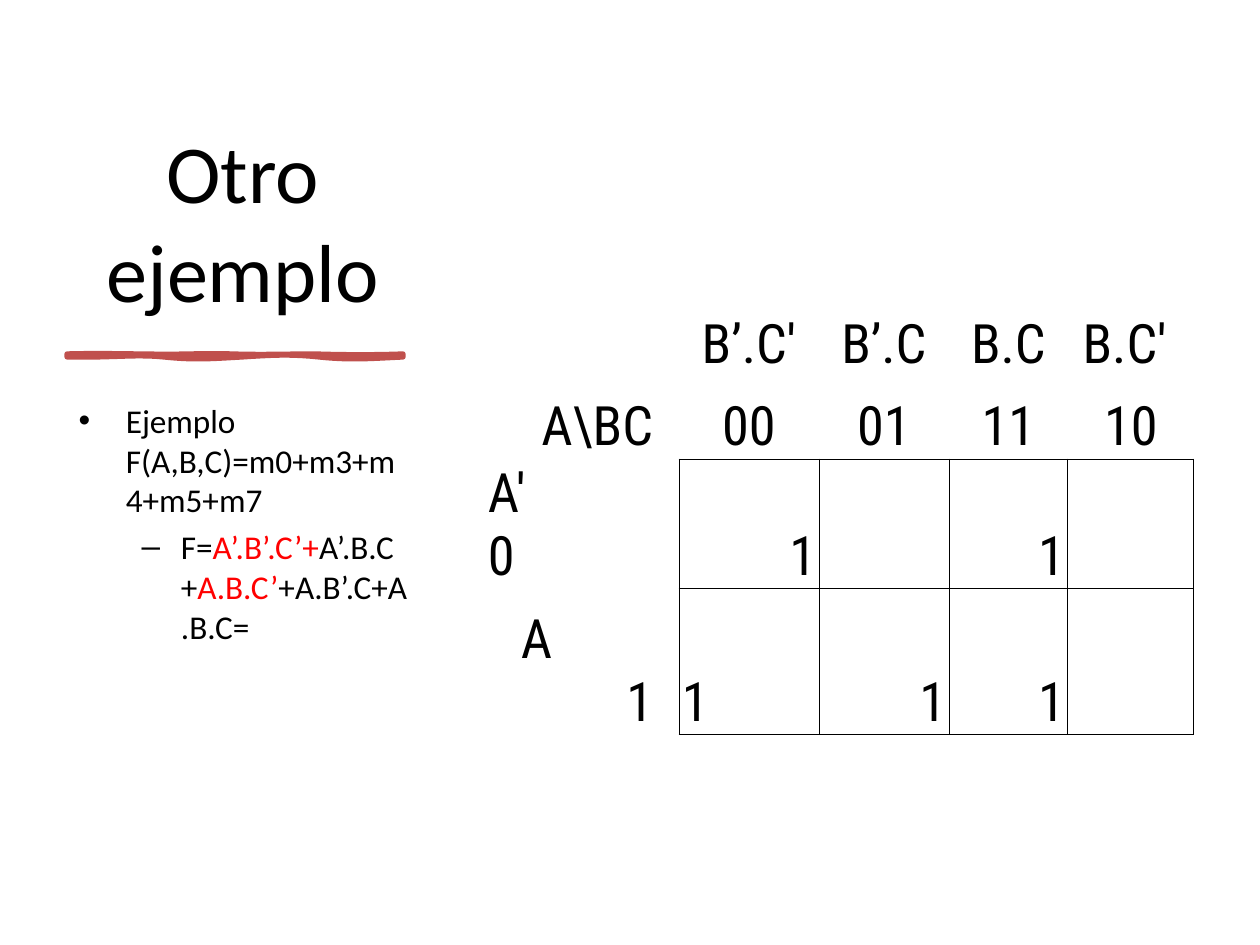
from dataclasses import dataclass

from lxml.etree import SubElement
from pptx import Presentation
from pptx.dml.color import RGBColor
from pptx.enum.text import MSO_ANCHOR, MSO_AUTO_SIZE, PP_ALIGN
from pptx.oxml.ns import qn
from pptx.util import Emu, Pt

EMU_PER_PX = 914400 / 126


def px(length):
    return Emu(round(length * EMU_PER_PX))


@dataclass(frozen=True)
class Theme:
    text: str = "000000"
    marked: str = "FF0000"
    accent: str = "C0504D"
    text_font: str = "Calibri"
    table_font: str = "Roboto Condensed"
    title_size: int = 47
    body_size: int = 19
    table_size: int = 31
    grid_width: float = 0.5
    stroke_width: int = 3


def bezier(start, first, second, end, steps=10):
    """Points on a cubic curve, without its start."""
    for step in range(1, steps + 1):
        t = step / steps
        weights = ((1 - t) ** 3, 3 * t * (1 - t) ** 2, 3 * t * t * (1 - t), t ** 3)
        yield tuple(
            sum(weight * value for weight, value in zip(weights, axis))
            for axis in zip(start, first, second, end)
        )


class SlideBuilder:
    def __init__(self, slide, theme):
        self.slide = slide
        self.theme = theme

    def add_span(self, para, text, size, font, color=None):
        span = para.add_run()
        span.text = text
        span.font.size = Pt(size)
        span.font.name = font
        span.font.color.rgb = RGBColor.from_string(color or self.theme.text)

    def place(self, box, left, top, width, height):
        box.left, box.top, box.width, box.height = map(px, (left, top, width, height))
        frame = box.text_frame
        frame.word_wrap = True
        frame.auto_size = MSO_AUTO_SIZE.NONE
        return frame

    def title(self, text, *area):
        frame = self.place(self.slide.shapes.title, *area)
        frame.vertical_anchor = MSO_ANCHOR.BOTTOM
        para = frame.paragraphs[0]
        para.alignment = PP_ALIGN.CENTER
        self.add_span(para, text, self.theme.title_size, self.theme.text_font)

    def bullets(self, items, *area):
        frame = self.place(self.slide.placeholders[1], *area)
        frame.margin_top = px(13)
        for index, (level, spans) in enumerate(items):
            para = frame.add_paragraph() if index else frame.paragraphs[0]
            para.level = level
            if index == 0:
                para.space_before = Pt(0)
            for text, color in spans:
                self.add_span(para, text, self.theme.body_size, self.theme.text_font, color)

    def brush_stroke(self, start, curves):
        points = []
        current = start
        for curve in curves:
            points.extend(bezier(current, *curve))
            current = curve[-1]
        builder = self.slide.shapes.build_freeform(px(start[0]), px(start[1]))
        builder.add_line_segments([(px(x), px(y)) for x, y in points], close=True)
        stroke = builder.convert_to_shape()
        stroke.shadow.inherit = False
        stroke.fill.solid()
        stroke.fill.fore_color.rgb = RGBColor.from_string(self.theme.accent)
        stroke.line.color.rgb = RGBColor.from_string(self.theme.accent)
        stroke.line.width = Pt(self.theme.stroke_width)

    def table(self, rows, left, top, widths, heights):
        table = self.slide.shapes.add_table(
            len(heights), len(widths), px(left), px(top), px(sum(widths)), px(sum(heights))
        ).table
        table.first_row = table.horz_banding = False
        for column, width in zip(table.columns, widths):
            column.width = px(width)
        for row, height in zip(table.rows, heights):
            row.height = px(height)
        for r, contents in enumerate(rows):
            for c, paras in enumerate(contents):
                cell = table.cell(r, c)
                in_grid = r >= 2 and c >= 1
                self.borders(cell, {
                    "L": in_grid,
                    "R": in_grid or r >= 2,
                    "T": in_grid,
                    "B": in_grid or (r == 1 and c >= 1),
                })
                cell.fill.background()
                self.cell_text(cell, paras, right_margin=3 if c else 26)

    def borders(self, cell, sides):
        properties = cell._tc.get_or_add_tcPr()
        for side, visible in sides.items():
            line = SubElement(properties, qn(f"a:ln{side}"), w=str(Pt(self.theme.grid_width)))
            if visible:
                fill = SubElement(line, qn("a:solidFill"))
                SubElement(fill, qn("a:srgbClr"), val=self.theme.text)
            else:
                SubElement(line, qn("a:noFill"))

    def cell_text(self, cell, paras, right_margin):
        cell.vertical_anchor = MSO_ANCHOR.BOTTOM
        cell.margin_left = cell.margin_top = px(3)
        cell.margin_right = px(right_margin)
        cell.margin_bottom = 0
        for index, (text, alignment, indent, tab) in enumerate(paras):
            frame = cell.text_frame
            para = frame.add_paragraph() if index else frame.paragraphs[0]
            properties = para._p.get_or_add_pPr()
            if indent:
                properties.set("marL", str(px(indent)))
            if tab:
                stops = SubElement(properties, qn("a:tabLst"))
                SubElement(stops, qn("a:tab"), pos=str(px(tab)), algn="l")
            para.alignment = alignment
            self.add_span(para, text, self.theme.table_size, self.theme.table_font)


def entry(text, alignment=PP_ALIGN.RIGHT, indent=0, tab=0):
    return (text, alignment, indent, tab)


def header(*texts):
    return [[entry(text, PP_ALIGN.CENTER)] for text in texts]


def main():
    deck = Presentation()
    deck.slide_width, deck.slide_height = px(1260), px(945)
    theme = Theme()
    page = SlideBuilder(deck.slides.add_slide(deck.slide_layouts[1]), theme)

    # Title and the brush stroke under it
    page.title("Otro ejemplo", 66, 88, 354, 237)
    page.brush_stroke((67, 354), [
        ((105, 353), (116, 354), (147, 354)),
        ((179, 355), (203, 353), (232, 354)),
        ((260, 355), (286, 354), (315, 354)),
        ((345, 355), (377, 355), (403, 354)),
        ((403, 355), (403, 357), (403, 357)),
        ((365, 359), (348, 360), (319, 357)),
        ((290, 354), (273, 355), (242, 357)),
        ((209, 359), (192, 360), (164, 357)),
        ((136, 354), (112, 358), (67, 357)),
    ])

    # Function and its minterms
    page.bullets([
        (0, [("Ejemplo F(A,B,C)=m0+m3+m4+m5+m7", None)]),
        (1, [
            ("F=", None),
            ("A’.B’.C’+", theme.marked),
            ("A’.B.C+", None),
            ("A.B.C’", theme.marked),
            ("+A.B’.C+A.B.C=", None),
        ]),
    ], 66, 387, 354, 470)

    # Karnaugh map
    one = [entry("1")]
    left_one = [entry("1", PP_ALIGN.LEFT)]
    row_zero = [entry("A'\t0", PP_ALIGN.LEFT, indent=4, tab=141)]
    row_one = [entry("A", PP_ALIGN.LEFT, indent=37), entry("1")]
    page.table([
        [[], *header("B’.C'", "B’.C", "B.C", "B.C' ")],
        [[entry("A\\BC")], *header("00", "01", "11", "10")],
        [row_zero, one, [], one, []],
        [row_one, left_one, one, one, []],
    ], 481, 277, widths=(198, 140, 130, 119, 126), heights=(100, 82, 101, 146))

    deck.save("out.pptx")


if __name__ == "__main__":
    main()
